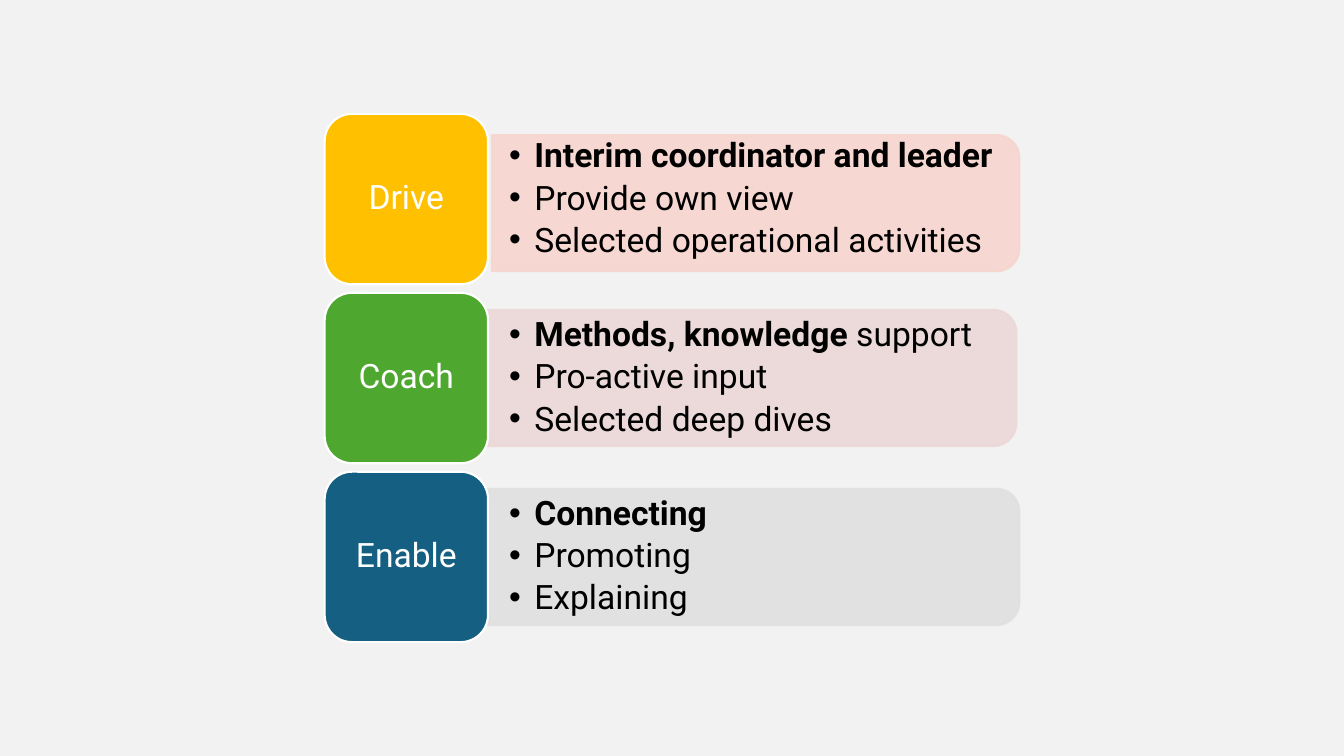
import pptx
import pptx.util
import pptx.dml.color
import pptx.enum.shapes
import pptx.enum.text
import pptx.oxml
import pptx.oxml.ns
import lxml.etree

Inches = pptx.util.Inches
Pt = pptx.util.Pt
RGBColor = pptx.dml.color.RGBColor
SHAPE = pptx.enum.shapes.MSO_SHAPE
ALIGN = pptx.enum.text.PP_ALIGN
ANCHOR = pptx.enum.text.MSO_ANCHOR

BACKGROUND = RGBColor(0xF2, 0xF2, 0xF2)
WHITE = RGBColor(0xFF, 0xFF, 0xFF)
BLACK = RGBColor(0x00, 0x00, 0x00)
YELLOW = RGBColor(0xFF, 0xC0, 0x00)
GREEN = RGBColor(0x4E, 0xA7, 0x2E)
BLUE = RGBColor(0x15, 0x60, 0x82)
PEACH = RGBColor(0xF7, 0xD5, 0xCE)
ROSE = RGBColor(0xEB, 0xD8, 0xD7)
GREY = RGBColor(0xE0, 0xE0, 0xE0)

TILE_W, TILE_H = 1.62, 1.69
BAR_H, TEXT_H = 1.35, 1.22
ROW_LEFT, ROW_TOP, ROW_PITCH = 3.22, 1.13, 1.775

ROLES = [
    ("Drive", YELLOW, PEACH, (1.66, 0.21, 5.23),
     [[("Interim coordinator and leader", True)],
      [("Provide own view", False)],
      [("Selected operational activities", False)]]),
    ("Coach", GREEN, ROSE, (1.54, 0.17, 5.32),
     [[("Methods, knowledge ", True), ("support", False)],
      [("Pro-active input", False)],
      [("Selected deep dives", False)]]),
    ("Enable", BLUE, GREY, (1.55, 0.17, 5.34),
     [[("Connecting", True)],
      [("Promoting", False)],
      [("Explaining", False)]]),
]


def apply_format(obj, values):
    for name, value in values.items():
        setattr(obj, name, value)


def add_run(p, text, color, bold=False):
    r = p.add_run()
    r.text = text
    apply_format(r.font, {"name": "Roboto", "size": Pt(24), "bold": bold})
    r.font.color.rgb = color


def add_panel(s, kind, box, fill, line):
    sp = s.shapes.add_shape(kind, *(Inches(v) for v in box))
    sp.shadow.inherit = False
    sp.fill.solid()
    sp.fill.fore_color.rgb = fill
    sp.line.color.rgb = line
    sp.line.width = Pt(1.5)
    return sp


def add_bar(s, left, top, width, color):
    shift = (width - BAR_H) / 2
    box = (left + shift, top - shift, BAR_H, width)
    sp = add_panel(s, SHAPE.ROUND_2_SAME_RECTANGLE, box, color, color)
    sp.rotation = 90
    for clr in sp.element.spPr.iter(pptx.oxml.ns.qn("a:srgbClr")):
        lxml.etree.SubElement(clr, pptx.oxml.ns.qn("a:alpha"), val="90000")


def add_bullets(s, left, top, width, items):
    box = (left, top, width, TEXT_H)
    tf = s.shapes.add_textbox(*(Inches(v) for v in box)).text_frame
    apply_format(tf, {
        "word_wrap": True, "vertical_anchor": ANCHOR.MIDDLE,
        "margin_left": Inches(0.27), "margin_right": Inches(0.27),
        "margin_top": Inches(0.14), "margin_bottom": Inches(0.14),
    })
    for i, item in enumerate(items):
        p = tf.add_paragraph() if i else tf.paragraphs[0]
        apply_format(p, {"level": 1, "line_spacing": 0.9, "space_after": Pt(4.2)})
        pPr = p._p.get_or_add_pPr()
        pPr.set("marL", str(Inches(0.25)))
        pPr.set("indent", str(Inches(-0.25)))
        lxml.etree.SubElement(pPr, pptx.oxml.ns.qn("a:buFont"), typeface="Arial")
        lxml.etree.SubElement(pPr, pptx.oxml.ns.qn("a:buChar"), char="•")
        for text, bold in item:
            add_run(p, text, BLACK, bold)


def add_tile(s, left, top, label, color):
    box = (left, top, TILE_W, TILE_H)
    tf = add_panel(s, SHAPE.ROUNDED_RECTANGLE, box, color, WHITE).text_frame
    apply_format(tf, {"word_wrap": True, "vertical_anchor": ANCHOR.MIDDLE})
    p = tf.paragraphs[0]
    apply_format(p, {"alignment": ALIGN.CENTER, "line_spacing": 0.9})
    add_run(p, label, WHITE)


def add_role(s, left, top, role):
    label, tile_color, bar_color, (bar_dx, bar_dy, bar_w), items = role
    add_bar(s, left + bar_dx, top + bar_dy, bar_w, bar_color)
    add_bullets(s, left + 1.56, top + (TILE_H - TEXT_H) / 2, 5.46, items)
    add_tile(s, left, top, label, tile_color)


def main():
    prs = pptx.Presentation()
    apply_format(prs, {"slide_width": Inches(13.33), "slide_height": Inches(7.5)})
    s = prs.slides.add_slide(prs.slide_layouts[6])
    s.background.fill.solid()
    s.background.fill.fore_color.rgb = BACKGROUND
    for i, role in enumerate(ROLES):
        add_role(s, ROW_LEFT, ROW_TOP + i * ROW_PITCH, role)
    prs.save("out.pptx")


if __name__ == "__main__":
    main()
